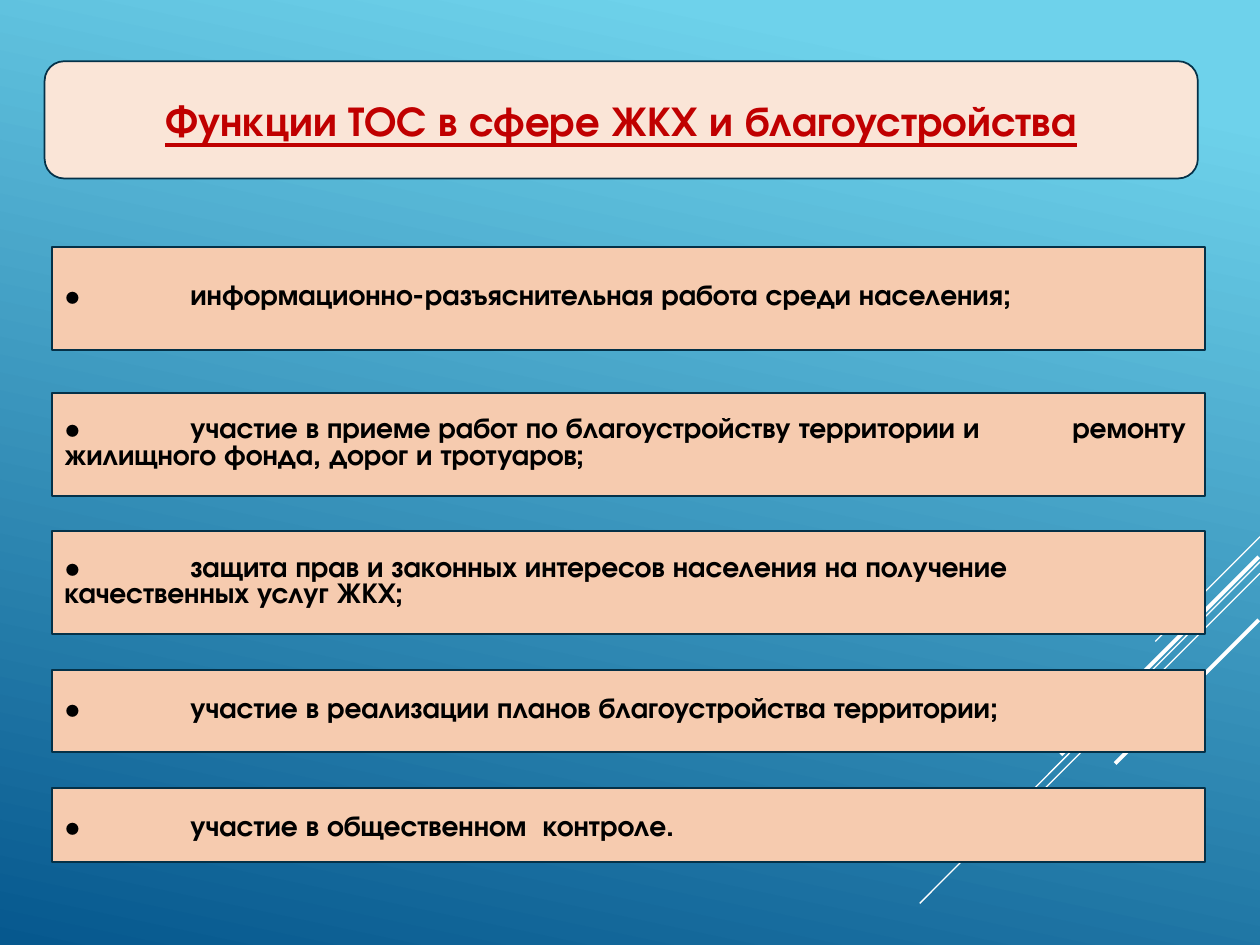
from lxml.etree import SubElement
from pptx import Presentation
from pptx.dml.color import RGBColor
from pptx.enum.shapes import MSO_CONNECTOR, MSO_SHAPE
from pptx.enum.text import MSO_ANCHOR, PP_ALIGN
from pptx.oxml.ns import qn
from pptx.util import Pt

SKY = RGBColor(0x6E, 0xD2, 0xEB)
DEEP_BLUE = RGBColor(0x06, 0x58, 0x8E)
WHITE = RGBColor(0xFF, 0xFF, 0xFF)
NAVY = RGBColor(0x04, 0x31, 0x48)
CREAM = RGBColor(0xFA, 0xE5, 0xD7)
PEACH = RGBColor(0xF6, 0xCB, 0xAF)
RED = RGBColor(0xC0, 0x00, 0x00)
BLACK = RGBColor(0x00, 0x00, 0x00)
FONT = "TeX Gyre Adventor"
BOX_WIDTH = 659


def add_box(kind, left, top, height, fill, text, size, color):
    """Add an outlined box with bold text and return its paragraph."""
    shape = slide.shapes.add_shape(kind, Pt(left), Pt(top), Pt(BOX_WIDTH), Pt(height))
    shape.shadow.inherit = False
    shape.fill.solid()
    shape.fill.fore_color.rgb = fill
    shape.line.color.rgb = NAVY
    shape.line.width = Pt(1)
    text_frame = shape.text_frame
    text_frame.word_wrap = True
    text_frame.vertical_anchor = MSO_ANCHOR.MIDDLE
    text_frame.text = text
    paragraph = text_frame.paragraphs[0]
    paragraph.alignment = PP_ALIGN.LEFT
    font = paragraph.runs[0].font
    font.name = FONT
    font.size = Pt(size)
    font.bold = True
    font.color.rgb = color
    return paragraph


presentation = Presentation()
presentation.slide_width = Pt(720)
presentation.slide_height = Pt(540)
slide = presentation.slides.add_slide(presentation.slide_layouts[6])

background = slide.background.fill
background.gradient()
background.gradient_angle = 258
for stop, position, color in zip(background.gradient_stops, (0.1, 1), (SKY, DEEP_BLUE)):
    stop.position = position
    stop.color.rgb = color

# Diagonal rays: right x, top y, left x, bottom y, line width
rays = [
    (720, 306.7, 660.2, 366.5, 0.75),
    (720, 321.1, 525.6, 516.2, 0.75),
    (720, 327.6, 596.2, 451.4, 0.75),
    (719.3, 318.2, 606.2, 431.3, 2.25),
    (719.3, 354.2, 637.2, 436.3, 2.25),
]
for right, top, left, bottom, width in rays:
    ray = slide.shapes.add_connector(
        MSO_CONNECTOR.STRAIGHT, Pt(right), Pt(top), Pt(left), Pt(bottom))
    ray.line.color.rgb = WHITE
    ray.line.width = Pt(width)
    SubElement(ray._element.spPr, qn("a:effectLst"))

title = add_box(MSO_SHAPE.ROUNDED_RECTANGLE, 25.5, 35, 67, CREAM,
                "Функции ТОС в сфере ЖКХ и благоустройства", 24, RED)
title.alignment = PP_ALIGN.CENTER
title.runs[0].font.underline = True

# Functions: top, height, line spacing, text
functions = [
    (141.1, 59, Pt(15), "информационно-разъяснительная работа среди населения;"),
    (224.6, 59, Pt(15), "участие в приеме работ по благоустройству территории и "
                        "\tремонту жилищного фонда, дорог и тротуаров;"),
    (303.5, 59, Pt(15), "защита прав и законных интересов населения на получение "
                        "\tкачественных услуг ЖКХ;"),
    (382.9, 46.8, Pt(15), "участие в реализации планов благоустройства территории;"),
    (450.4, 42.2, None, "участие в общественном  контроле."),
]
for top, height, spacing, text in functions:
    paragraph = add_box(MSO_SHAPE.RECTANGLE, 29.7, top, height, PEACH,
                        "•\t" + text, 16.5, BLACK)
    paragraph.line_spacing = spacing
    tab_list = SubElement(paragraph._p.get_or_add_pPr(), qn("a:tabLst"))
    for tab_position in (72, 576):
        SubElement(tab_list, qn("a:tab"), pos=str(Pt(tab_position)), algn="l")

presentation.save("out.pptx")
